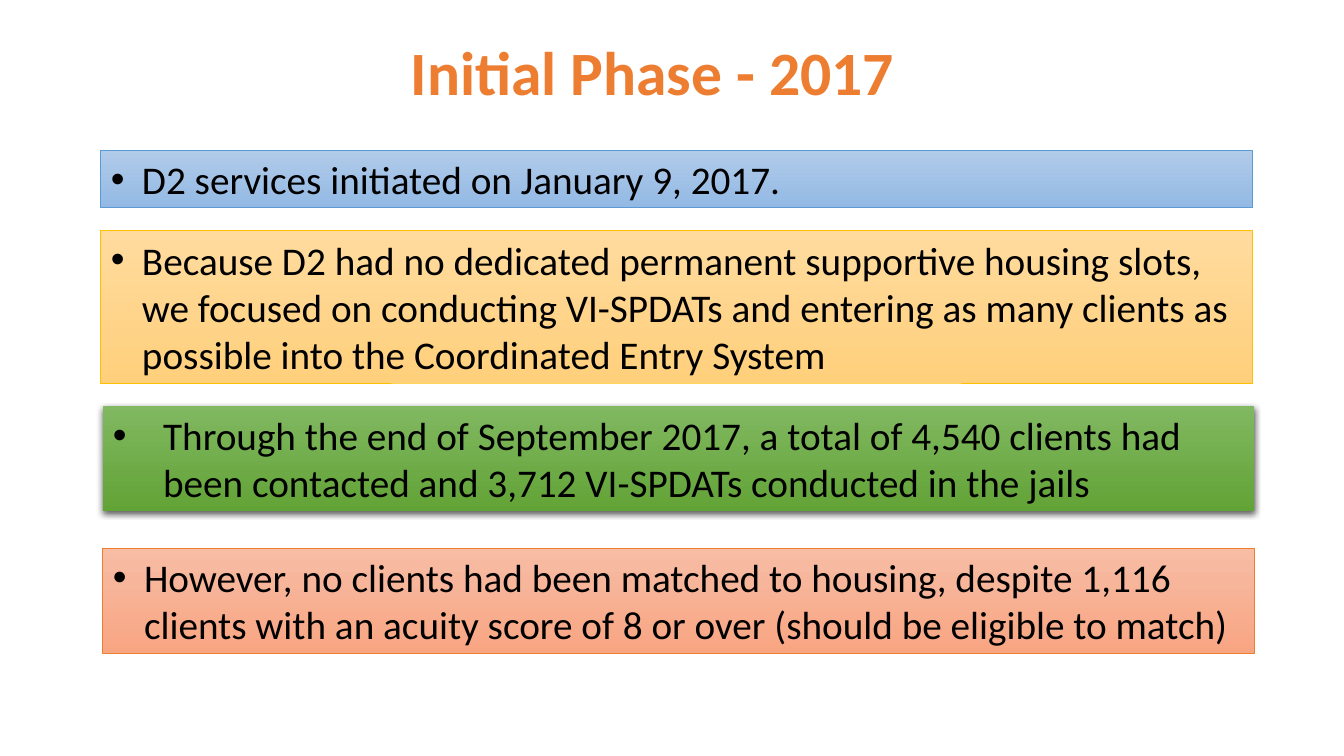
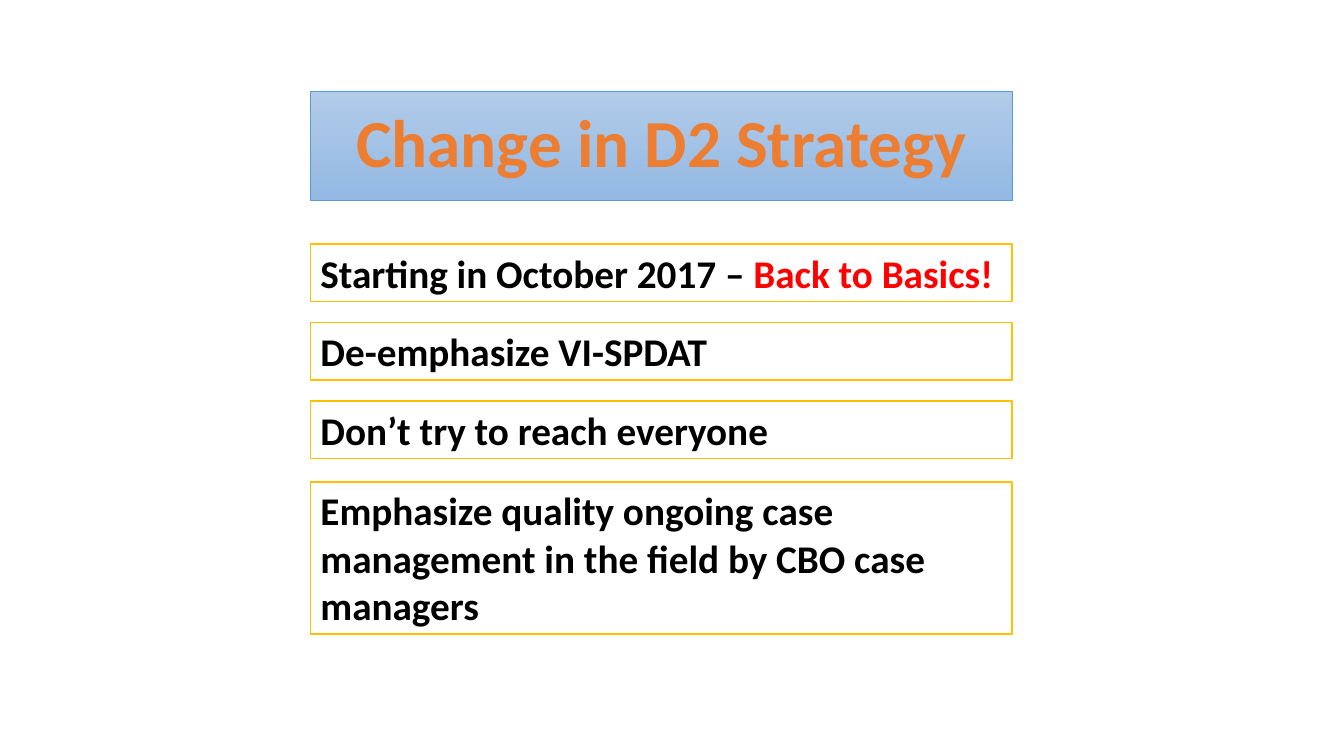
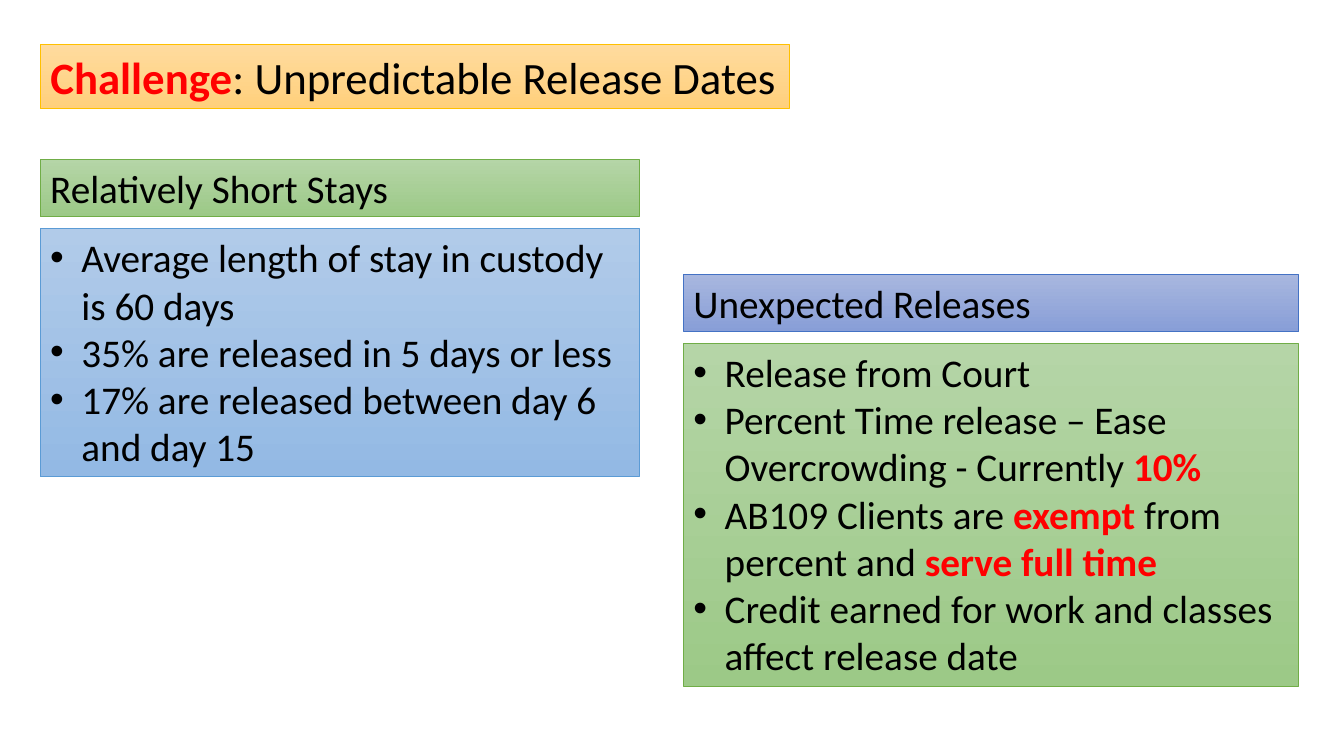
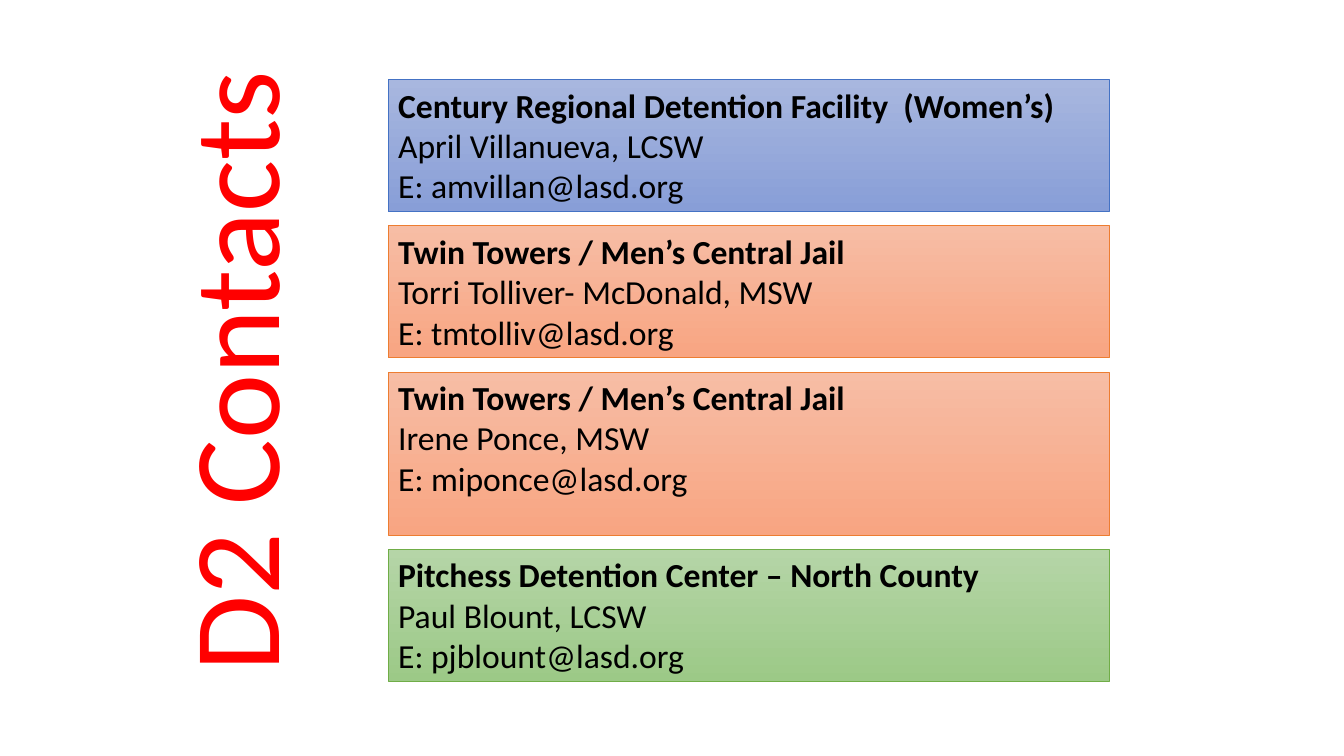
from lxml.etree import SubElement
from pptx import Presentation
from pptx.dml.color import RGBColor
from pptx.enum.shapes import MSO_SHAPE
from pptx.enum.text import MSO_ANCHOR, MSO_AUTO_SIZE, PP_ALIGN
from pptx.oxml.ns import qn
from pptx.util import Inches, Pt

FONT = "Calibri"
BLACK = RGBColor(0x00, 0x00, 0x00)
WHITE = RGBColor(0xFF, 0xFF, 0xFF)
RED = RGBColor(0xFF, 0x00, 0x00)
ORANGE = RGBColor(0xED, 0x7D, 0x31)
GOLD = RGBColor(0xFF, 0xC0, 0x00)

# Box styles: gradient top, gradient bottom, outline
BLUE_BOX = (RGBColor(0xB1, 0xCB, 0xE9), RGBColor(0x93, 0xB9, 0xE4), RGBColor(0x5B, 0x9B, 0xD5))
INDIGO_BOX = (RGBColor(0xA8, 0xB7, 0xDF), RGBColor(0x88, 0x9E, 0xD7), RGBColor(0x44, 0x72, 0xC4))
ORANGE_BOX = (RGBColor(0xF7, 0xBD, 0xA5), RGBColor(0xF8, 0xA5, 0x82), ORANGE)
GOLD_BOX = (RGBColor(0xFF, 0xDB, 0x9E), RGBColor(0xFF, 0xD0, 0x7C), GOLD)
GREEN_BOX = (RGBColor(0xB5, 0xD5, 0xA7), RGBColor(0x9C, 0xC9, 0x87), RGBColor(0x70, 0xAD, 0x47))
DEEP_GREEN_BOX = (RGBColor(0x81, 0xB8, 0x61), RGBColor(0x62, 0xA3, 0x36), None)
OUTLINE_BOX = (WHITE, WHITE, GOLD)

# Template layouts
TITLE_ONLY, BLANK = 5, 6

# Content; text between asterisks is emphasized in bold red
INITIAL_PHASE = [  # left, top, height, style, indent, text
    (1, 1.49, 0.57, BLUE_BOX, 0.31, "D2 services initiated on January 9, 2017."),
    (1, 2.29, 1.51, GOLD_BOX, 0.31,
     "Because D2 had no dedicated permanent supportive housing slots, we focused on conducting "
     "VI-SPDATs and entering as many clients as possible into the Coordinated Entry System"),
    (1.02, 4.03, 1.04, DEEP_GREEN_BOX, 0.5,
     "Through the end of September 2017, a total of 4,540 clients had been contacted and "
     "3,712 VI-SPDATs conducted in the jails"),
    (1.02, 5.44, 1.04, ORANGE_BOX, 0.31,
     "However, no clients had been matched to housing, despite 1,116 clients with an acuity "
     "score of 8 or over (should be eligible to match)"),
]
STRATEGY = [  # top, height, text
    (2.42, 0.57, "Starting in October 2017 – *Back to Basics!*"),
    (3.2, 0.57, "De-emphasize VI-SPDAT"),
    (3.98, 0.57, "Don’t try to reach everyone"),
    (4.78, 1.51, "Emphasize quality ongoing case management in the field by CBO case managers"),
]
RELEASES = [  # left, top, width, body height, heading style, body style, heading, points
    (0.4, 1.58, 5.94, 2.46, GREEN_BOX, BLUE_BOX, "Relatively Short Stays", [
        "Average length of stay in custody is 60 days",
        "35% are released in 5 days or less",
        "17% are released between day 6 and day 15",
    ]),
    (6.78, 2.72, 6.1, 3.4, INDIGO_BOX, GREEN_BOX, "Unexpected Releases", [
        "Release from Court",
        "Percent Time release – Ease Overcrowding - Currently *10%*",
        "AB109 Clients are *exempt *from percent and *serve full time*",
        "Credit earned for work and classes affect release date",
    ]),
]
CONTACTS = [  # height, style, lines
    (1.31, INDIGO_BOX, ["Century Regional Detention Facility  (Women’s)",
                        "April Villanueva, LCSW", "E: amvillan@lasd.org"]),
    (1.31, ORANGE_BOX, ["Twin Towers / Men’s Central Jail",
                        "Torri Tolliver- McDonald, MSW", "E: tmtolliv@lasd.org"]),
    (1.62, ORANGE_BOX, ["Twin Towers / Men’s Central Jail",
                        "Irene Ponce, MSW", "E: miponce@lasd.org"]),
    (1.31, GREEN_BOX, ["Pitchess Detention Center – North County",
                       "Paul Blount, LCSW", "E: pjblount@lasd.org"]),
]


def paint(shape, style):
    top_color, bottom_color, outline = style
    if top_color == bottom_color:
        shape.fill.solid()
        shape.fill.fore_color.rgb = top_color
    else:
        shape.fill.gradient()
        shape.fill.gradient_angle = 270
        for stop, color in zip(shape.fill.gradient_stops, (top_color, bottom_color)):
            stop.color.rgb = color
    if outline is None:
        shape.line.fill.background()
    else:
        shape.line.color.rgb = outline
        shape.line.width = Pt(1 if style is OUTLINE_BOX else 0.5)


def add_bullet(paragraph, indent):
    properties = paragraph._p.get_or_add_pPr()
    properties.set("marL", str(Inches(indent)))
    properties.set("indent", str(-Inches(indent)))
    SubElement(properties, qn("a:buFont"), typeface="Arial")
    SubElement(properties, qn("a:buChar"), char="•")


def write(shape, texts, size, color=BLACK, bold=False, indent=0,
          align=PP_ALIGN.LEFT, anchor=MSO_ANCHOR.TOP):
    frame = shape.text_frame
    frame.word_wrap = True
    frame.auto_size = MSO_AUTO_SIZE.NONE
    frame.vertical_anchor = anchor
    for index, text in enumerate(texts):
        paragraph = frame.paragraphs[0] if index == 0 else frame.add_paragraph()
        paragraph.alignment = align
        if indent:
            add_bullet(paragraph, indent)
        paragraph.font.name = FONT
        paragraph.font.size = Pt(size)
        paragraph.font.bold = bold
        paragraph.font.color.rgb = color
        for position, part in enumerate(text.split("*")):
            if part:
                run = paragraph.add_run()
                run.text = part
                if position % 2:
                    run.font.bold = True
                    run.font.color.rgb = RED


def add_box(slide, left, top, width, height, style, texts, size=28, **text_format):
    shape = slide.shapes.add_shape(
        MSO_SHAPE.RECTANGLE, Inches(left), Inches(top), Inches(width), Inches(height))
    shape.shadow.inherit = False
    paint(shape, style)
    write(shape, texts, size, **text_format)
    return shape


def add_shadow(shape):
    effects = shape._element.spPr.find(qn("a:effectLst"))
    shadow = SubElement(effects, qn("a:outerShdw"), blurRad=str(Pt(4.5)), dist=str(Pt(1.5)),
                        dir="5400000", algn="ctr", rotWithShape="0")
    color = SubElement(shadow, qn("a:srgbClr"), val=str(BLACK))
    SubElement(color, qn("a:alpha"), val="63000")


def add_titled_slide(presentation, left, top, width, height, text, size, style=None, **text_format):
    slide = presentation.slides.add_slide(presentation.slide_layouts[TITLE_ONLY])
    title = slide.shapes.title
    title.left, title.top = Inches(left), Inches(top)
    title.width, title.height = Inches(width), Inches(height)
    if style:
        paint(title, style)
    write(title, [text], size, anchor=MSO_ANCHOR.MIDDLE, **text_format)
    return slide


def build_initial_phase(presentation):
    slide = add_titled_slide(presentation, 3.34, 0.28, 6.27, 0.84, "Initial Phase - 2017", 44,
                             color=ORANGE, bold=True, align=PP_ALIGN.CENTER)
    for left, top, height, style, indent, text in INITIAL_PHASE:
        box = add_box(slide, left, top, 11.42, height, style, [text], indent=indent)
        if style is DEEP_GREEN_BOX:
            add_shadow(box)


def build_strategy(presentation):
    left, width = 3.08, 6.96
    slide = add_titled_slide(presentation, left, 0.91, width, 1.08, "Change in D2 Strategy", 48,
                             BLUE_BOX, color=ORANGE, bold=True, align=PP_ALIGN.CENTER)
    slide.shapes.title.text_frame.paragraphs[0].line_spacing = 0.9
    for top, height, text in STRATEGY:
        add_box(slide, left, top, width, height, OUTLINE_BOX, [text], bold=True)


def build_releases(presentation):
    slide = add_titled_slide(presentation, 0.4, 0.44, 7.43, 0.64,
                             "*Challenge*: Unpredictable Release Dates", 32, GOLD_BOX)
    heading_height, gap = 0.57, 0.12
    for left, top, width, height, heading_style, body_style, heading, points in RELEASES:
        add_box(slide, left, top, width, heading_height, heading_style, [heading])
        add_box(slide, left, top + heading_height + gap, width, height, body_style, points,
                indent=0.31)


def build_contacts(presentation):
    slide = presentation.slides.add_slide(presentation.slide_layouts[BLANK])
    # Heading reads upwards; title placeholders do not turn their text reliably
    heading = slide.shapes.add_textbox(Inches(1.5), Inches(0.36), Inches(1.68), Inches(6.4))
    write(heading, ["D2 Contacts"], 88, color=RED)
    heading.text_frame._txBody.bodyPr.set("vert", "vert270")
    top, gap = 0.79, 0.14
    for height, style, lines in CONTACTS:
        box = add_box(slide, 3.85, top, 7.15, height, style, lines, size=24)
        box.text_frame.paragraphs[0].font.bold = True
        top += height + gap


def main():
    presentation = Presentation()
    presentation.slide_width, presentation.slide_height = Inches(13.33), Inches(7.5)
    build_initial_phase(presentation)
    build_strategy(presentation)
    build_releases(presentation)
    build_contacts(presentation)
    presentation.save("out.pptx")


if __name__ == "__main__":
    main()
